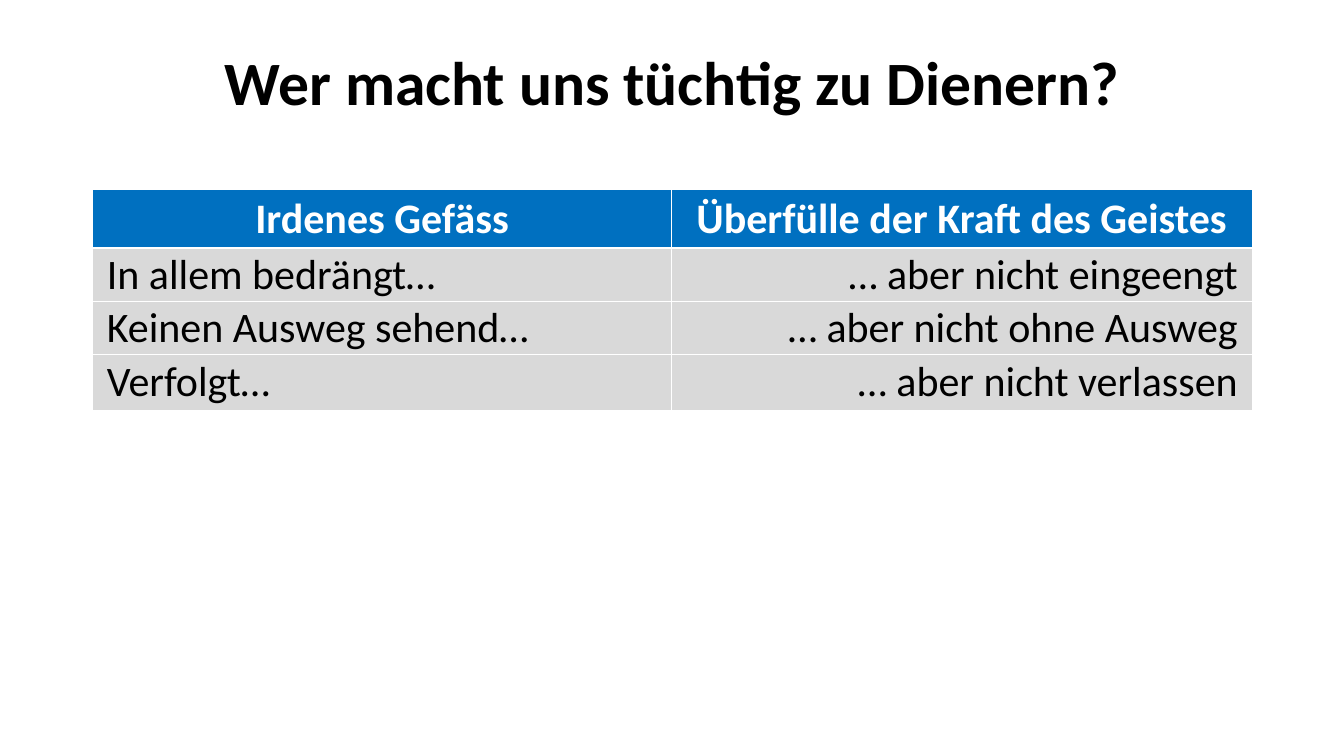
from pptx import Presentation
from pptx import util as u
from pptx.dml.color import RGBColor
from pptx.enum import text

TITLE = "Wer macht uns tüchtig zu Dienern?"
ROWS = [
    ("Irdenes Gefäss", "Überfülle der Kraft des Geistes"),
    ("In allem bedrängt…", "… aber nicht eingeengt"),
    ("Keinen Ausweg sehend…", "… aber nicht ohne Ausweg"),
    ("Verfolgt…", "… aber nicht verlassen"),
]
SLIDE = (1333, 750)
LEFT, WIDTH = 92, 1150
TITLE_TOP, TITLE_HEIGHT = 40, 89
TABLE_TOP = 188
COL_WIDTHS = (574, 576)
ROW_HEIGHTS = (58, 53, 53, 55)
CELL_MARGINS = {"margin_left": 14, "margin_right": 14,
                "margin_top": 0, "margin_bottom": 0}

ALIGN = text.PP_ALIGN
MIDDLE = text.MSO_ANCHOR.MIDDLE
TITLE_FONT = {"name": "Calibri", "size": u.Pt(44), "bold": True}
HEAD_FONT = {"name": "Calibri", "size": u.Pt(30), "bold": True}
BODY_FONT = {**HEAD_FONT, "bold": False}
HEAD = ("0070C0", "FFFFFF", HEAD_FONT, (ALIGN.CENTER, ALIGN.CENTER))
BODY = ("D9D9D9", "000000", BODY_FONT, (ALIGN.LEFT, ALIGN.RIGHT))


def px(n):
    return u.Emu(n * 9144)


def rgb(value):
    return RGBColor.from_string(value)


def write(tf, words, font, color, align):
    p = tf.paragraphs[0]
    p.alignment = align
    r = p.add_run()
    r.text = words
    for name, value in font.items():
        setattr(r.font, name, value)
    r.font.color.rgb = rgb(color)
    return p


def add_title(s):
    sp = s.shapes.add_textbox(px(LEFT), px(TITLE_TOP), px(WIDTH), px(TITLE_HEIGHT))
    tf = sp.text_frame
    tf.word_wrap = True
    tf.vertical_anchor = MIDDLE
    p = write(tf, TITLE, TITLE_FONT, "000000", ALIGN.CENTER)
    p.line_spacing = 0.9


def add_comparison(s):
    table = s.shapes.add_table(
        len(ROWS), len(COL_WIDTHS), px(LEFT), px(TABLE_TOP),
        px(sum(COL_WIDTHS)), px(sum(ROW_HEIGHTS))).table
    table.horz_banding = False
    for column, width in zip(table.columns, COL_WIDTHS):
        column.width = px(width)
    for i, (row, height, words) in enumerate(zip(table.rows, ROW_HEIGHTS, ROWS)):
        row.height = px(height)
        fill, color, font, aligns = BODY if i else HEAD
        for cell, content, align in zip(row.cells, words, aligns):
            for name, value in CELL_MARGINS.items():
                setattr(cell, name, px(value))
            cell.vertical_anchor = MIDDLE
            cell.fill.solid()
            cell.fill.fore_color.rgb = rgb(fill)
            write(cell.text_frame, content, font, color, align)


def main():
    prs = Presentation()
    prs.slide_width, prs.slide_height = map(px, SLIDE)
    s = prs.slides.add_slide(prs.slide_layouts[6])
    add_title(s)
    add_comparison(s)
    prs.save("out.pptx")


if __name__ == "__main__":
    main()
